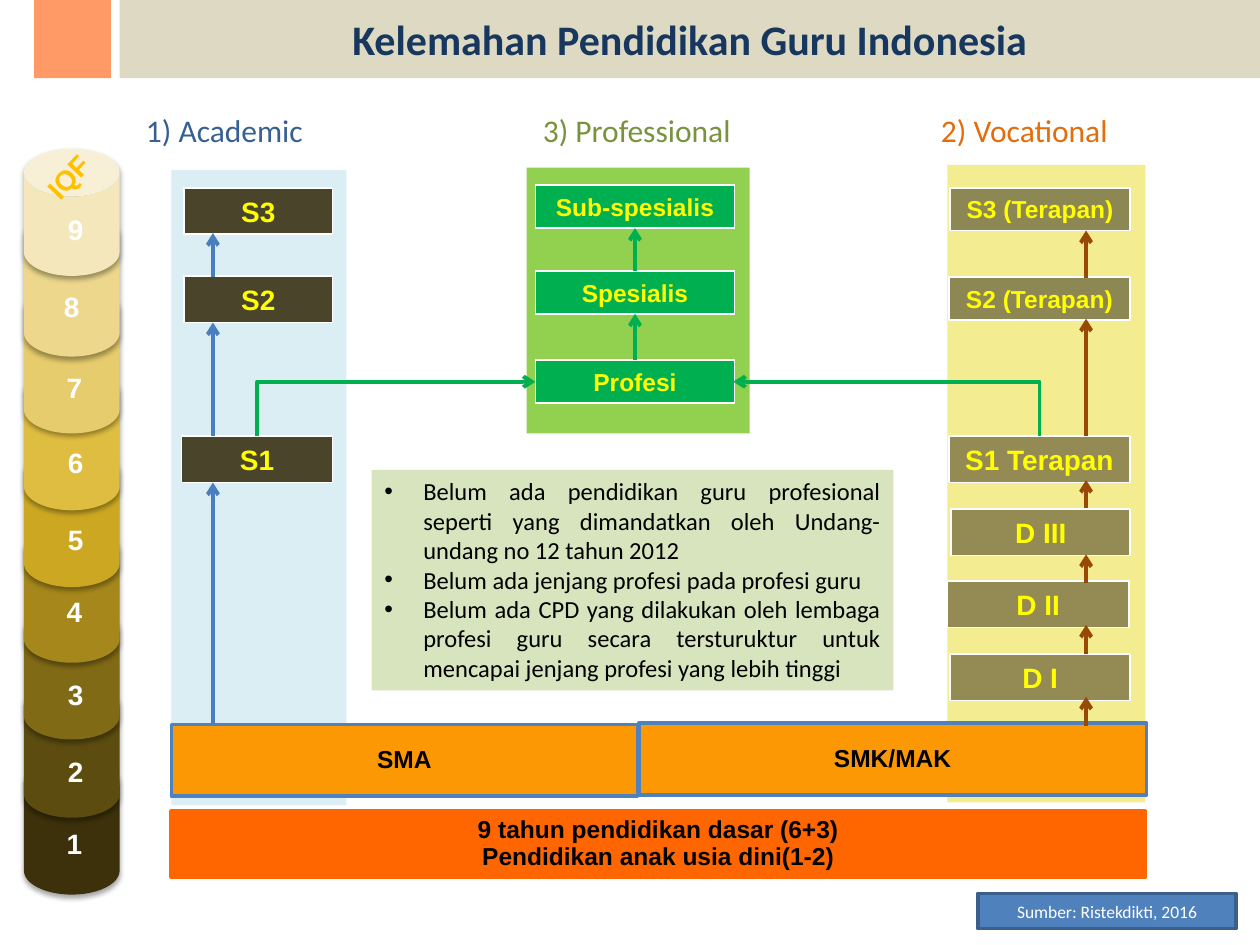
from lxml.etree import SubElement
from pptx import Presentation
from pptx.dml.color import RGBColor
from pptx.enum.shapes import MSO_CONNECTOR, MSO_SHAPE
from pptx.enum.text import MSO_ANCHOR, MSO_AUTO_SIZE, PP_ALIGN
from pptx.oxml.ns import qn
from pptx.util import Inches, Pt

COLOURS = {
    "title": "17375E", "title_band": "DDD9C3", "title_block": "FF9966",
    "academic": "DBEEF4", "professional": "92D050", "vocational": "F3EC91",
    "academic_box": "4A452A", "professional_box": "00B050", "vocational_box": "948A54",
    "academic_label": "376092", "professional_label": "77933C", "vocational_label": "E46C0A",
    "academic_arrow": "4B7EBC", "professional_arrow": "00B050", "vocational_arrow": "984807",
    "school": "FC9804", "school_line": "4F81BD", "basic": "FF6600",
    "notes": "D7E4BD", "source": "4F81BD", "source_line": "3A5F8C",
    "yellow": "FFFF00", "gold": "FFC000", "white": "FFFFFF", "black": "000000",
}

LEVELS = [
    ("1", 6.02, 1.08, "3C310A", 0.43, 6.51),
    ("2", 5.41, 1.08, "5D4C0F", 0.44, 5.94),
    ("3", 4.81, 1.06, "816A15", 0.44, 5.33),
    ("4", 4.18, 1.08, "A5871B", 0.43, 4.67),
    ("5", 3.56, 1.10, "CCA822", 0.44, 4.10),
    ("6", 2.93, 1.12, "DFBD41", 0.44, 3.49),
    ("7", 2.27, 1.17, "E6CC6C", 0.43, 2.89),
    ("8", 1.68, 1.15, "ECD78C", 0.41, 2.25),
    ("9", 1.18, 1.01, "F3E7BB", 0.44, 1.64),
]

WEAKNESSES = [
    "Belum ada pendidikan guru profesional seperti yang dimandatkan oleh Undang-undang no 12 tahun 2012",
    "Belum ada jenjang profesi pada profesi guru",
    "Belum ada CPD yang dilakukan oleh lembaga profesi guru secara tersturuktur untuk mencapai jenjang "
    "profesi yang lebih tinggi",
]


def colour(name):
    """Return the colour for a palette name or a hex string."""
    return RGBColor.from_string(COLOURS.get(name, name))


def paint(shape, fill, line=None, line_width=1):
    """Set the fill and the outline of a shape."""
    shape.fill.solid()
    shape.fill.fore_color.rgb = colour(fill)
    if line:
        shape.line.color.rgb = colour(line)
        shape.line.width = Pt(line_width)
    else:
        shape.line.fill.background()


def place(shape, left, top, width, height):
    """Move and size a shape in inches."""
    shape.left, shape.top = Inches(left), Inches(top)
    shape.width, shape.height = Inches(width), Inches(height)


def write(shape, lines, size, text_colour, font="Arial", bold=True, align=PP_ALIGN.CENTER, spacing=1.0):
    """Write one paragraph for each line and return the paragraphs."""
    frame = shape.text_frame
    frame.auto_size = MSO_AUTO_SIZE.NONE
    for index, line in enumerate(lines):
        paragraph = frame.add_paragraph() if index else frame.paragraphs[0]
        paragraph.alignment = align
        paragraph.line_spacing = spacing
        paragraph.space_before = Pt(0)
        run = paragraph.add_run()
        run.text = line
        run.font.name, run.font.size, run.font.bold = font, Pt(size), bold
        run.font.color.rgb = colour(text_colour)
    return frame.paragraphs


def add_box(slide, bounds, fill, line=None, line_width=1, kind=MSO_SHAPE.RECTANGLE):
    """Add a filled preset shape without shadow."""
    box = slide.shapes.add_shape(kind, *map(Inches, bounds))
    box.shadow.inherit = False
    paint(box, fill, line, line_width)
    return box


def add_degree(slide, text, bounds, fill, size=16, opacity=None):
    """Add a white-edged box naming a degree."""
    box = add_box(slide, bounds, fill, "white")
    if opacity:
        fill_colour = box.element.spPr.find(qn("a:solidFill"))[0]
        SubElement(fill_colour, qn("a:alpha"), val=str(opacity * 1000))
    write(box, [text], size, "yellow")
    return box


def add_label(slide, text, bounds, size, text_colour, font="Arial", bold=True, align=PP_ALIGN.LEFT):
    """Add an unwrapped one-line text box."""
    label = slide.shapes.add_textbox(*map(Inches, bounds))
    label.text_frame.word_wrap = False
    write(label, [text], size, text_colour, font, bold, align)
    return label


def add_level(slide, top, height, fill):
    """Add one shadowed cylinder of the qualification framework."""
    can = add_box(slide, (0.19, top, 0.76, height), fill, kind=MSO_SHAPE.CAN)
    can.adjustments[0] = 0.5
    effects = can.element.spPr.find(qn("a:effectLst"))
    shadow = SubElement(effects, qn("a:outerShdw"), blurRad=str(int(Pt(3.1))), dist=str(int(Pt(1.8))),
                        dir="5400000", rotWithShape="0")
    shadow_colour = SubElement(shadow, qn("a:srgbClr"), val=COLOURS["black"])
    SubElement(shadow_colour, qn("a:alpha"), val="35000")


def add_arrow(slide, start, end, line_colour, kind=MSO_CONNECTOR.STRAIGHT):
    """Add a connector with an open arrowhead at its end."""
    connector = slide.shapes.add_connector(kind, *map(Inches, (*start, *end)))
    connector.line.color.rgb = colour(line_colour)
    connector.line.width = Pt(2.25)
    properties = connector.element.spPr
    SubElement(properties.find(qn("a:ln")), qn("a:tailEnd"), type="arrow")
    SubElement(properties, qn("a:effectLst"))
    return connector


def add_corner_arrow(slide, start, end, line_colour):
    """Add an arrow that rises from its start and then turns sideways."""
    run, rise = end[0] - start[0], start[1] - end[1]
    middle_x, middle_y = (start[0] + end[0]) / 2, (start[1] + end[1]) / 2
    connector = add_arrow(slide, (middle_x - rise / 2, middle_y - run / 2),
                          (middle_x + rise / 2, middle_y + run / 2), line_colour, MSO_CONNECTOR.ELBOW)
    properties = connector.element.spPr
    properties.find(qn("a:xfrm")).set("rot", str(270 * 60000))
    properties.find(qn("a:prstGeom")).set("prst", "bentConnector2")


def add_header(slide):
    """Format the title band and its side block."""
    title = slide.shapes.title
    place(title, 0.95, 0, 9.05, 0.62)
    paint(title, "title_band")
    title.text_frame.vertical_anchor = MSO_ANCHOR.MIDDLE
    write(title, ["Kelemahan Pendidikan Guru Indonesia"], 24, "title", "Calibri")
    add_box(slide, (0.27, 0, 0.61, 0.62), "title_block")


def add_weaknesses(slide):
    """Format the bulleted list of weaknesses."""
    body = slide.placeholders[1]
    place(body, 2.95, 3.73, 4.14, 1.75)
    paint(body, "notes")
    body.text_frame.vertical_anchor = MSO_ANCHOR.TOP
    for paragraph in write(body, WEAKNESSES, 14, "black", "Calibri", False, PP_ALIGN.JUSTIFY):
        properties = paragraph._p.get_or_add_pPr()
        properties.set("marL", str(int(Inches(0.31))))
        properties.set("indent", str(int(Inches(-0.31))))
        SubElement(properties, qn("a:buChar"), char="•")


def add_framework(slide):
    """Add the stack of nine framework levels."""
    for _, top, height, fill, _, _ in LEVELS:
        add_level(slide, top, height, fill)
    for number, _, _, _, left, top in LEVELS:
        add_label(slide, number, (left, top, 0.3, 0.37), 16, "white")
    heading = add_label(slide, "IQF", (0.06, 1.22, 0.96, 0.37), 16, "gold", align=PP_ALIGN.CENTER)
    heading.rotation = 313


def add_pathways(slide):
    """Add the three columns with their headings and degrees."""
    for name, text, column, label in [
        ("vocational", "2) Vocational", (7.52, 1.31, 1.57, 5.06), (7.37, 0.83, 1.6, 0.4)),
        ("academic", "1) Academic", (1.36, 1.35, 1.39, 5.04), (1.06, 0.83, 1.52, 0.4)),
        ("professional", "3) Professional", (4.18, 1.33, 1.77, 2.11), (4.21, 0.83, 1.71, 0.4)),
    ]:
        add_box(slide, column, name)
        add_label(slide, text, label, 18, f"{name}_label", "Calibri", False)
    for text, left, top, width in [("S3", 1.46, 1.49, 1.18), ("S2", 1.46, 2.19, 1.18), ("S1", 1.44, 3.46, 1.2)]:
        add_degree(slide, text, (left, top, width, 0.37), "academic_box")
    for text, left, top, width in [("S1 Terapan", 7.53, 3.46, 1.44), ("D III", 7.55, 4.04, 1.42),
                                   ("D II", 7.52, 4.61, 1.44), ("D I", 7.54, 5.19, 1.43)]:
        add_degree(slide, text, (left, top, width, 0.37), "vocational_box")
    for text, left, top, width in [("S3 (Terapan)", 7.54, 1.49, 1.43), ("S2 (Terapan)", 7.53, 2.2, 1.44)]:
        add_degree(slide, text, (left, top, width, 0.34), "academic_box", 14, 60)


def add_schools(slide):
    """Add the school and basic education bars."""
    basic = add_box(slide, (1.36, 6.44, 7.73, 0.52), "basic", "basic", 2.25)
    write(basic, ["9 tahun pendidikan dasar (6+3)", "Pendidikan anak usia dini(1-2)"], 14, "black", spacing=0.9)
    for text, bounds in [("SMK/MAK", (5.07, 5.74, 4.03, 0.57)), ("SMA", (1.36, 5.75, 3.7, 0.57))]:
        school = add_box(slide, bounds, "school", "school_line", 2)
        write(school, [text], 14, "black", spacing=0.9)


def add_progressions(slide):
    """Add the professional degrees and all arrows between degrees."""
    steps = [add_degree(slide, text, (4.25, top, 1.58, 0.34), "professional_box", 14)
             for text, top in [("Profesi", 2.86), ("Spesialis", 2.15), ("Sub-spesialis", 1.47)]]
    for lower, upper in zip(steps, steps[1:]):
        arrow = add_arrow(slide, (5.04, 2.86), (5.04, 2.49), "professional_arrow")
        arrow.begin_connect(lower, 0)
        arrow.end_connect(upper, 2)
    add_corner_arrow(slide, (2.04, 3.46), (4.25, 3.03), "professional_arrow")
    add_corner_arrow(slide, (8.25, 3.46), (5.82, 3.03), "professional_arrow")
    for name, x, spans in [
        ("academic_arrow", 1.69, [(5.75, 3.83), (3.46, 2.56), (2.2, 1.85)]),
        ("vocational_arrow", 8.62, [(5.76, 5.53), (5.19, 4.96), (4.63, 4.4), (4.03, 3.81), (3.46, 2.53), (2.21, 1.83)]),
    ]:
        for bottom, top in spans:
            add_arrow(slide, (x, bottom), (x, top), name)


def main():
    """Build the slide and save the presentation."""
    presentation = Presentation()
    presentation.slide_width, presentation.slide_height = Inches(10), Inches(7.5)
    slide = presentation.slides.add_slide(presentation.slide_layouts[1])
    add_header(slide)
    add_pathways(slide)
    add_framework(slide)
    add_schools(slide)
    add_progressions(slide)
    add_weaknesses(slide)
    source = add_box(slide, (7.76, 7.09, 2.05, 0.28), "source", "source_line", 2)
    write(source, ["Sumber: Ristekdikti, 2016"], 10, "white", "Calibri", False)
    presentation.save("out.pptx")


if __name__ == "__main__":
    main()
